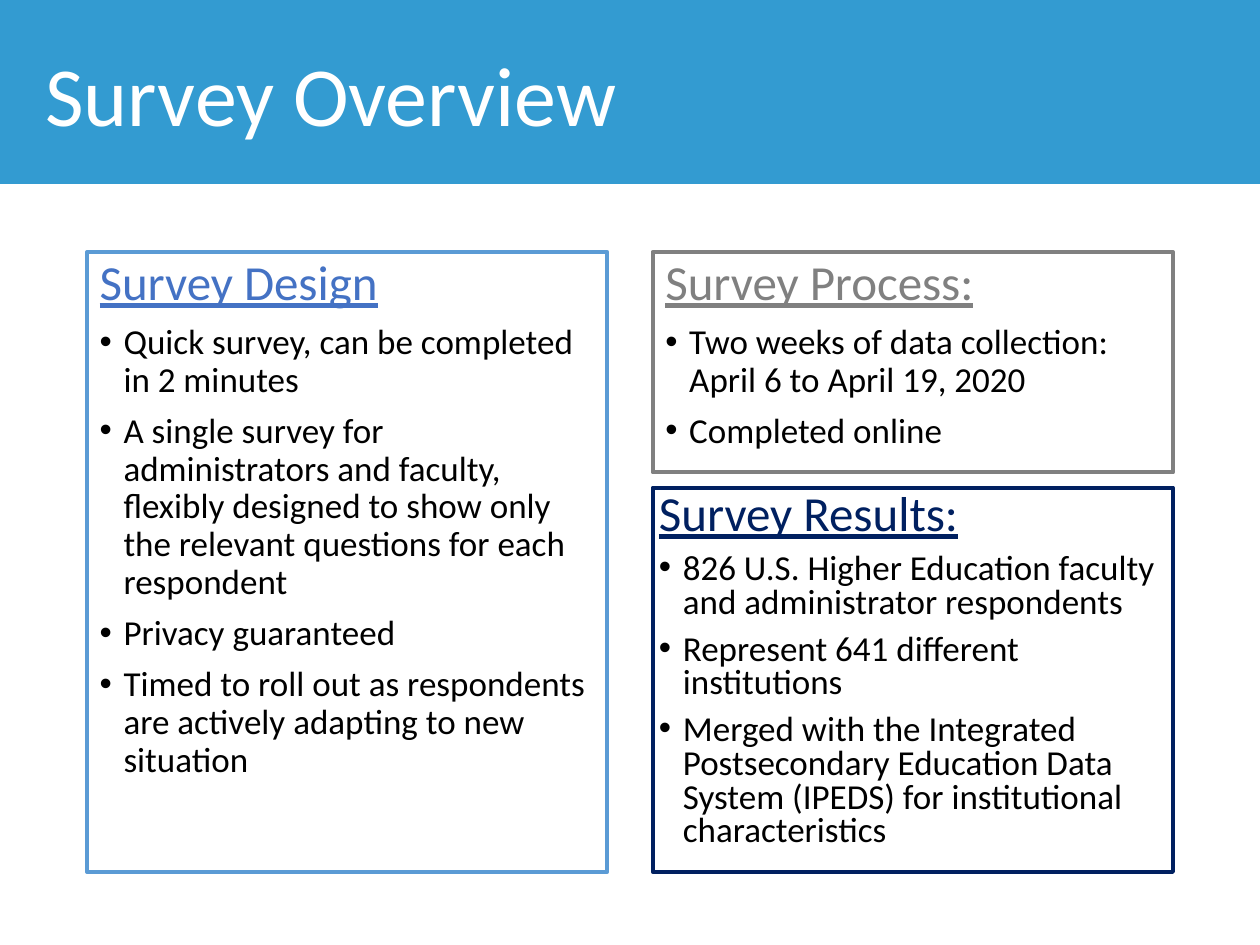
from lxml.etree import SubElement
from pptx import Presentation
from pptx.dml.color import RGBColor
from pptx.enum.shapes import MSO_SHAPE
from pptx.enum.text import MSO_ANCHOR, MSO_AUTO_SIZE, PP_ALIGN
from pptx.oxml.ns import qn
from pptx.util import Inches, Pt

COLORS = {
    "band": "339BD1", "white": "FFFFFF", "text": "000000",
    "design_line": "5B9BD5", "design": "4472C4",
    "process": "808080", "results": "002060",
}
COLORS = {name: RGBColor.from_string(value) for name, value in COLORS.items()}

# Grid in inches
LEFT, TOP, BOTTOM = 0.69, 2, 6.92
COLUMN, GUTTER, GAP = 4.13, 0.36, 0.12
PROCESS_HEIGHT = 1.75
RIGHT = LEFT + COLUMN + GUTTER
RESULTS_TOP = TOP + PROCESS_HEIGHT + GAP
INDENT = Inches(0.19)


def place(shape, left, top, width, height):
    box = {"left": left, "top": top, "width": width, "height": height}
    for side, inches in box.items():
        setattr(shape, side, Inches(inches))


def write(paragraph, text, size, color, spacing, underline=False):
    layout = {"alignment": PP_ALIGN.LEFT, "line_spacing": spacing}
    for name, value in layout.items():
        setattr(paragraph, name, value)
    run = paragraph.add_run()
    run.text = text
    font = {"name": "Calibri", "size": Pt(size), "underline": underline}
    for name, value in font.items():
        setattr(run.font, name, value)
    run.font.color.rgb = COLORS[color]


prs = Presentation()
prs.slide_width, prs.slide_height = Inches(10), Inches(7.5)
slide = prs.slides.add_slide(prs.slide_layouts.get_by_name("Two Content"))
title, design, process = slide.placeholders

# Title band, behind the title
band = slide.shapes.add_shape(MSO_SHAPE.RECTANGLE, 0, 0, prs.slide_width, Inches(1.45))
band.shadow.inherit = False
band.fill.solid()
band.fill.fore_color.rgb = COLORS["band"]
band.line.color.rgb = COLORS["band"]
band.line.width = Pt(1)
title.element.addprevious(band.element)

# Title
place(title, 0.26, 0.06, 8.62, 1.45)
title.text_frame.vertical_anchor = MSO_ANCHOR.MIDDLE
title.text_frame.auto_size = MSO_AUTO_SIZE.NONE
write(title.text_frame.paragraphs[0], "Survey Overview", 48, "white", 0.9)

# Survey panels: shape, box, line, heading colour, inset, line spacing, heading, points
results = slide.shapes.add_textbox(0, 0, 0, 0)
panels = [
    (design, (LEFT, TOP, COLUMN, BOTTOM - TOP), "design_line", "design", 0.1, 0.9,
     "Survey Design", [
         "Quick survey, can be completed in 2 minutes",
         "A single survey for administrators and faculty, flexibly designed "
         "to show only the relevant questions for each respondent",
         "Privacy guaranteed",
         "Timed to roll out as respondents are actively adapting to new situation"]),
    (process, (RIGHT, TOP, COLUMN, PROCESS_HEIGHT), "process", "process", 0.1, 0.9,
     "Survey Process:", [
         "Two weeks of data collection: April 6 to April 19, 2020",
         "Completed online"]),
    (results, (RIGHT, RESULTS_TOP, COLUMN, BOTTOM - RESULTS_TOP), "results", "results",
     0.05, 0.8, "Survey Results:", [
         "826 U.S. Higher Education faculty and administrator respondents",
         "Represent 641 different institutions",
         "Merged with the Integrated Postsecondary Education Data System (IPEDS) "
         "for institutional characteristics"]),
]
for panel, box, line, accent, inset, spacing, heading, points in panels:
    place(panel, *box)
    panel.line.color.rgb = COLORS[line]
    panel.line.width = Pt(2.25)
    frame = panel.text_frame
    frame_format = {
        "word_wrap": True, "auto_size": MSO_AUTO_SIZE.NONE,
        "vertical_anchor": MSO_ANCHOR.TOP,
        "margin_left": Inches(inset), "margin_right": Inches(inset),
        "margin_top": Inches(0.05), "margin_bottom": Inches(0.05),
    }
    for name, value in frame_format.items():
        setattr(frame, name, value)

    # Underlined heading without a bullet
    head = frame.paragraphs[0]
    props = head._p.get_or_add_pPr()
    props.set("marL", "0")
    props.set("indent", "0")
    SubElement(props, qn("a:buNone"))
    head.space_before = Pt(0)
    write(head, heading, 28, accent, spacing, underline=True)

    # Bulleted points
    for point in points:
        item = frame.add_paragraph()
        props = item._p.get_or_add_pPr()
        props.set("marL", str(INDENT))
        props.set("indent", str(-INDENT))
        SubElement(props, qn("a:buFont"), typeface="Arial")
        SubElement(props, qn("a:buChar"), char="•")
        item.space_before = Pt(7.5)
        write(item, point, 20, "text", spacing)

design.fill.solid()
design.fill.fore_color.rgb = COLORS["white"]

prs.save("out.pptx")
